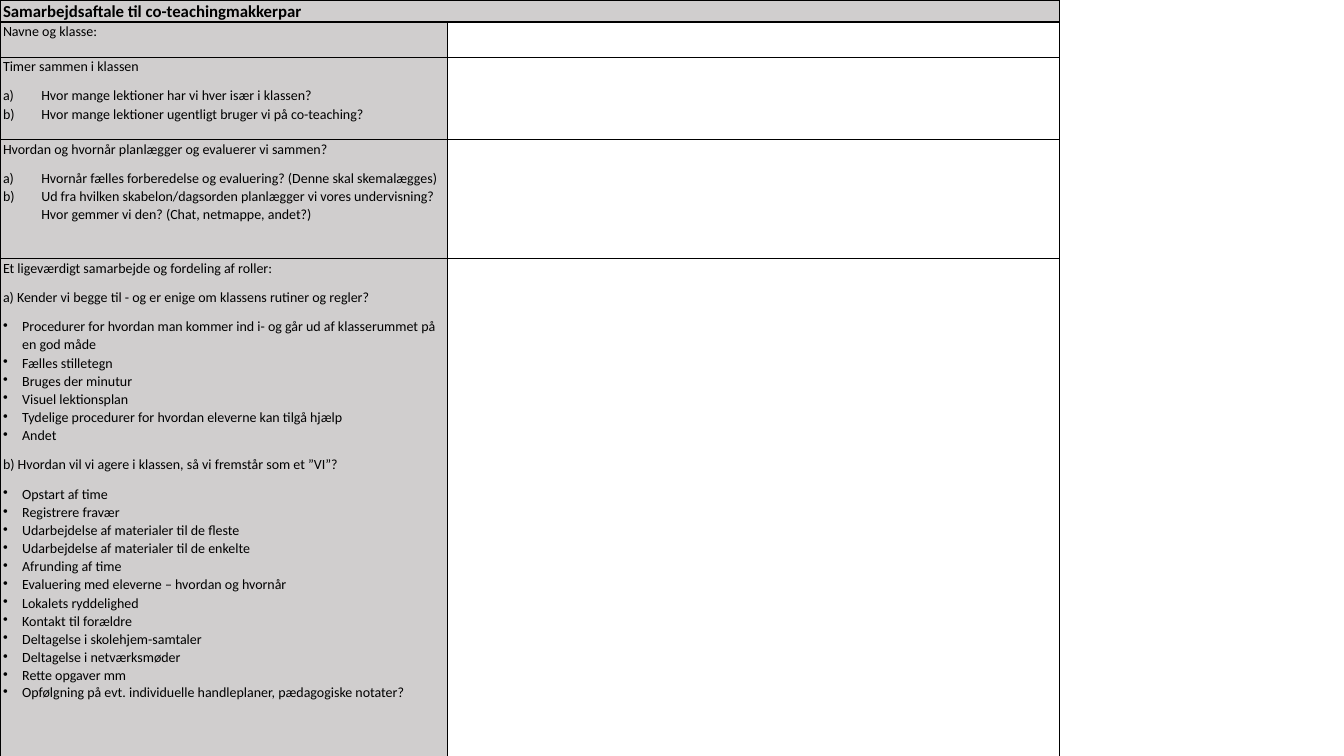
"""Build a one-slide co-teaching agreement form as a table."""
from dataclasses import dataclass
from typing import Optional

from lxml.etree import SubElement
from pptx import Presentation
from pptx.dml.color import RGBColor
from pptx.oxml import parse_xml
from pptx.oxml.ns import nsdecls, qn
from pptx.util import Inches, Pt

FONT = "Calibri"
BLACK = "000000"
GREY = "D0CECE"


@dataclass(frozen=True)
class ListStyle:
    tag: str
    attr: str
    value: str
    indent: float


LETTER = ListStyle("a:buAutoNum", "type", "alphaLcParenR", 0.38)
BULLET = ListStyle("a:buChar", "char", "•", 0.19)


@dataclass(frozen=True)
class Line:
    text: str
    style: Optional[ListStyle] = None
    after: float = 8
    spacing: float = 1.07


@dataclass(frozen=True)
class Section:
    height: float
    lines: list[Line]
    size: float = 10
    bold: bool = False


def items(style: ListStyle, *texts: str) -> list[Line]:
    """Return list lines with no space between them."""
    return [Line(text, style, after=0) for text in texts]


SECTIONS = [
    Section(0.2, [Line("Samarbejdsaftale til co-teachingmakkerpar")], 12, True),
    Section(0.35, [Line("Navne og klasse:")]),
    Section(0.82, [
        Line("Timer sammen i klassen"),
        *items(LETTER,
               "Hvor mange lektioner har vi hver især i klassen?",
               "Hvor mange lektioner ugentligt bruger vi på co-teaching?"),
    ]),
    Section(1.18, [
        Line("Hvordan og hvornår planlægger og evaluerer vi sammen?"),
        *items(LETTER,
               "Hvornår fælles forberedelse og evaluering? (Denne skal skemalægges)",
               "Ud fra hvilken skabelon/dagsorden planlægger vi vores undervisning? "
               "Hvor gemmer vi den? (Chat, netmappe, andet?)"),
    ]),
    Section(4.94, [
        Line("Et ligeværdigt samarbejde og fordeling af roller:"),
        Line("a) Kender vi begge til - og er enige om klassens rutiner og regler?"),
        *items(BULLET,
               "Procedurer for hvordan man kommer ind i- og går ud af klasserummet på en god måde",
               "Fælles stilletegn",
               "Bruges der minutur",
               "Visuel lektionsplan",
               "Tydelige procedurer for hvordan eleverne kan tilgå hjælp"),
        Line("Andet", BULLET),
        Line("b) Hvordan vil vi agere i klassen, så vi fremstår som et ”VI”?"),
        *items(BULLET,
               "Opstart af time",
               "Registrere fravær",
               "Udarbejdelse af materialer til de fleste",
               "Udarbejdelse af materialer til de enkelte",
               "Afrunding af time",
               "Evaluering med eleverne – hvordan og hvornår",
               "Lokalets ryddelighed",
               "Kontakt til forældre",
               "Deltagelse i skolehjem-samtaler",
               "Deltagelse i netværksmøder",
               "Rette opgaver mm"),
        Line("Opfølgning på evt. individuelle handleplaner, pædagogiske notater?",
             BULLET, spacing=1),
    ]),
]


def color(value: str) -> RGBColor:
    """Turn a hex string into a colour."""
    return RGBColor.from_string(value)


def format_cell(cell, fill: Optional[str]) -> None:
    """Set the margins, fill and black borders of a cell."""
    cell.margin_left = cell.margin_right = Inches(0.03)
    cell.margin_top = cell.margin_bottom = 0
    if fill:
        cell.fill.solid()
        cell.fill.fore_color.rgb = color(fill)
    else:
        cell.fill.background()
    tc_pr = cell._tc.get_or_add_tcPr()
    for i, side in enumerate("LRTB"):
        tc_pr.insert(i, parse_xml(
            f'<a:ln{side} {nsdecls("a")} w="{Pt(1)}"><a:solidFill>'
            f'<a:srgbClr val="{BLACK}"/></a:solidFill></a:ln{side}>'))


def write_section(cell, section: Section) -> None:
    """Write the lines of a section into its cell."""
    tf = cell.text_frame
    for i, line in enumerate(section.lines):
        p = tf.add_paragraph() if i else tf.paragraphs[0]
        p.text = line.text
        p.line_spacing = line.spacing
        p.space_before = Pt(0)
        p.space_after = Pt(line.after)
        if line.style:
            p_pr = p._p.get_or_add_pPr()
            indent = Inches(line.style.indent)
            p_pr.set("marL", str(indent))
            p_pr.set("indent", str(-indent))
            SubElement(p_pr, qn(line.style.tag)).set(line.style.attr, line.style.value)
        for r in p.runs:
            r.font.name = FONT
            r.font.size = Pt(section.size)
            r.font.bold = section.bold
            r.font.color.rgb = color(BLACK)


def main() -> None:
    """Build and save the slide."""
    prs = Presentation()
    prs.slide_width, prs.slide_height = Inches(13.33), Inches(7.5)
    s = prs.slides.add_slide(prs.slide_layouts[6])
    table = s.shapes.add_table(len(SECTIONS), 2, 0, 0, Inches(10.51), Inches(7.5)).table
    table.first_row = table.horz_banding = False
    for column, width in zip(table.columns, (4.44, 6.07)):
        column.width = Inches(width)
    table.cell(0, 0).merge(table.cell(0, 1))
    for i, section in enumerate(SECTIONS):
        table.rows[i].height = Inches(section.height)
        question, answer = table.cell(i, 0), table.cell(i, 1)
        format_cell(question, GREY)
        format_cell(answer, GREY if answer.is_spanned else None)
        write_section(question, section)
    prs.save("out.pptx")


if __name__ == "__main__":
    main()
